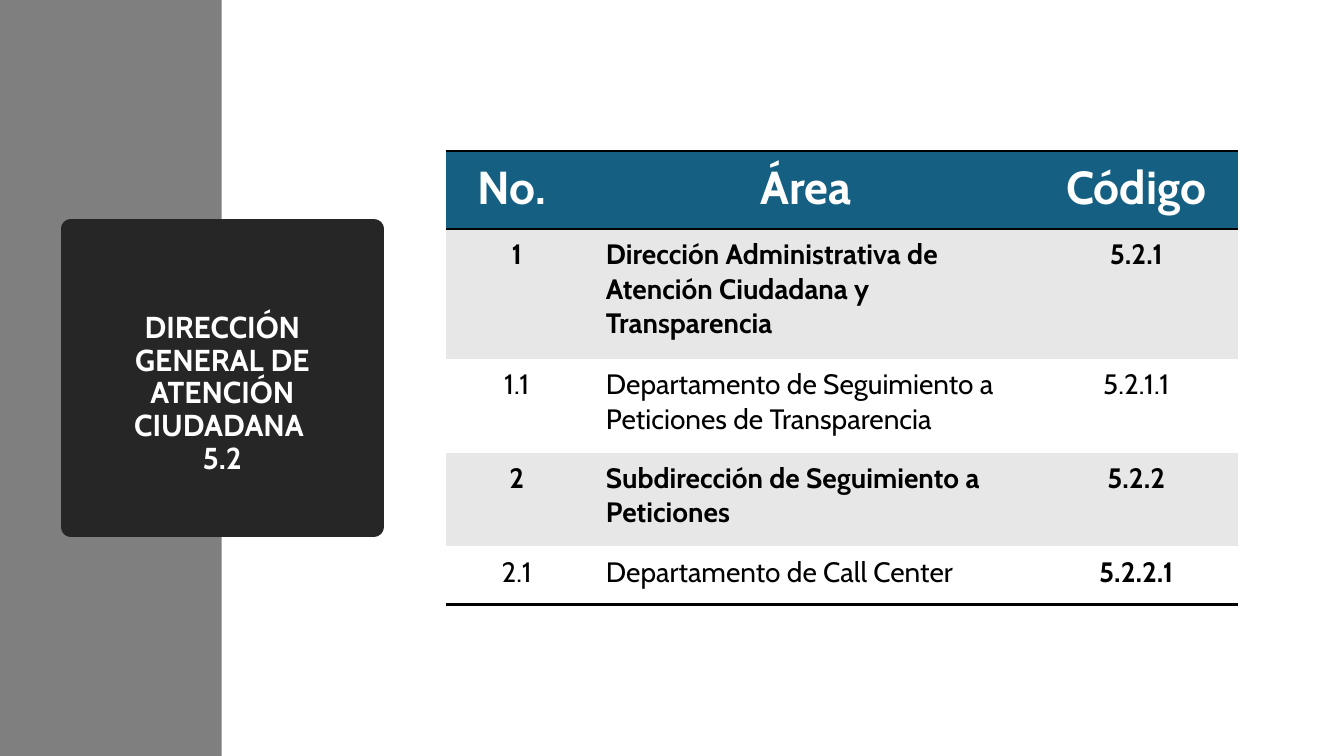
from lxml import etree
from pptx import Presentation
from pptx.dml.color import RGBColor
from pptx.enum.shapes import MSO_SHAPE
from pptx.enum.text import MSO_ANCHOR, PP_ALIGN
from pptx.oxml.ns import qn
from pptx.util import Inches, Pt

RECT = MSO_SHAPE.RECTANGLE
MIDDLE = MSO_ANCHOR.MIDDLE
TOP = MSO_ANCHOR.TOP
LEFT = PP_ALIGN.LEFT
CENTER = PP_ALIGN.CENTER

FONT = "Cabin"
WHITE, BLACK = "FFFFFF", "000000"
GREY, DARK, BLUE, BAND = "7F7F7F", "262626", "156082", "E7E7E7"
NO_STYLE = "{2D5ABB26-0587-4C30-8999-92F81FD0307C}"

TITLE = "DIRECCIÓN GENERAL DE ATENCIÓN CIUDADANA \v5.2"
HEADERS = ["No. ", "Área ", "Código"]
AREAS = [
    ["1", "Dirección Administrativa de Atención Ciudadana y Transparencia", "5.2.1"],
    ["1.1", "Departamento de Seguimiento a Peticiones de Transparencia", "5.2.1.1"],
    ["2", "Subdirección de Seguimiento a Peticiones", "5.2.2"],
    ["2.1", "Departamento de Call Center", "5.2.2.1"],
]
BOLD_CODES = {"5.2.1", "5.2.2", "5.2.2.1"}
COL_WIDTHS = [1.41, 4.43, 2.02]
ROW_HEIGHTS = [0.77, 1.29, 0.93, 0.93, 0.58]


def rgb(color):
    return RGBColor.from_string(color)


class SlideBuilder:
    """Hold the font and the current slide, and add styled elements to it."""

    def __init__(self, slide, font):
        self.slide = slide
        self.font = font

    def style(self, p, size, color, bold, align):
        p.alignment = align
        p.font.name = self.font
        p.font.size = Pt(size)
        p.font.bold = bold
        p.font.color.rgb = rgb(color)

    def box(self, x, y, w, h, color, line_width=0):
        sp = self.slide.shapes.add_shape(RECT, Inches(x), Inches(y), Inches(w), Inches(h))
        sp.shadow.inherit = False
        sp.fill.solid()
        sp.fill.fore_color.rgb = rgb(color)
        if line_width:
            sp.line.color.rgb = rgb(color)
            sp.line.width = Pt(line_width)
            etree.SubElement(sp.line._get_or_add_ln(), qn("a:round"))
        else:
            sp.line.fill.background()
        return sp

    def title(self, sp, text, size, side, top):
        tf = sp.text_frame
        tf.word_wrap = True
        tf.vertical_anchor = MIDDLE
        tf.margin_left = tf.margin_right = Inches(side)
        tf.margin_top, tf.margin_bottom = Inches(top), Inches(0.05)
        p = tf.paragraphs[0]
        p.text = text
        p.line_spacing = 0.9
        self.style(p, size, WHITE, True, CENTER)

    def table(self, x, y, widths, heights):
        frame = self.slide.shapes.add_table(
            len(heights), len(widths), Inches(x), Inches(y),
            Inches(sum(widths)), Inches(sum(heights)))
        table = frame.table
        table.horz_banding = False
        table._tbl.tblPr.find(qn("a:tableStyleId")).text = NO_STYLE
        for column, width in zip(table.columns, widths):
            column.width = Inches(width)
        for row, height in zip(table.rows, heights):
            row.height = Inches(height)
        return table

    def border(self, cell, side):
        tcPr = cell._tc.get_or_add_tcPr()
        ln = etree.SubElement(tcPr, qn(f"a:ln{side}"), w=str(Pt(2)))
        fill = etree.SubElement(ln, qn("a:solidFill"))
        etree.SubElement(fill, qn("a:srgbClr"), val=BLACK)

    def cell(self, cell, text, size, color, bold, align, fill, borders):
        for side in borders:
            self.border(cell, side)
        cell.fill.solid()
        cell.fill.fore_color.rgb = rgb(fill)
        cell.vertical_anchor = TOP
        cell.margin_left = cell.margin_right = Inches(0.18)
        cell.margin_top = cell.margin_bottom = Inches(0.09)
        p = cell.text_frame.paragraphs[0]
        p.text = text
        self.style(p, size, color, bold, align)


def main():
    prs = Presentation()
    prs.slide_width, prs.slide_height = Inches(13.33), Inches(7.5)
    s = SlideBuilder(prs.slides.add_slide(prs.slide_layouts[6]), FONT)

    s.box(0, 0, 2.2, 7.5, GREY)
    panel = s.box(0.7, 2.27, 3.01, 2.96, DARK, 13.75)
    s.title(panel, TITLE, 21.6, side=0.54, top=0.37)

    table = s.table(4.42, 1.5, COL_WIDTHS, ROW_HEIGHTS)
    for c, text in enumerate(HEADERS):
        s.cell(table.cell(0, c), text, 33, WHITE, True, CENTER, BLUE, "TB")
    for r, row in enumerate(AREAS, 1):
        fill = BAND if r % 2 else WHITE
        borders = "B" if r == len(AREAS) else ""
        for c, text in enumerate(row):
            bold = text in BOLD_CODES or (c < 2 and "." not in row[0])
            align = LEFT if c == 1 else CENTER
            s.cell(table.cell(r, c), text, 20, BLACK, bold, align, fill, borders)

    prs.save("out.pptx")


if __name__ == "__main__":
    main()
